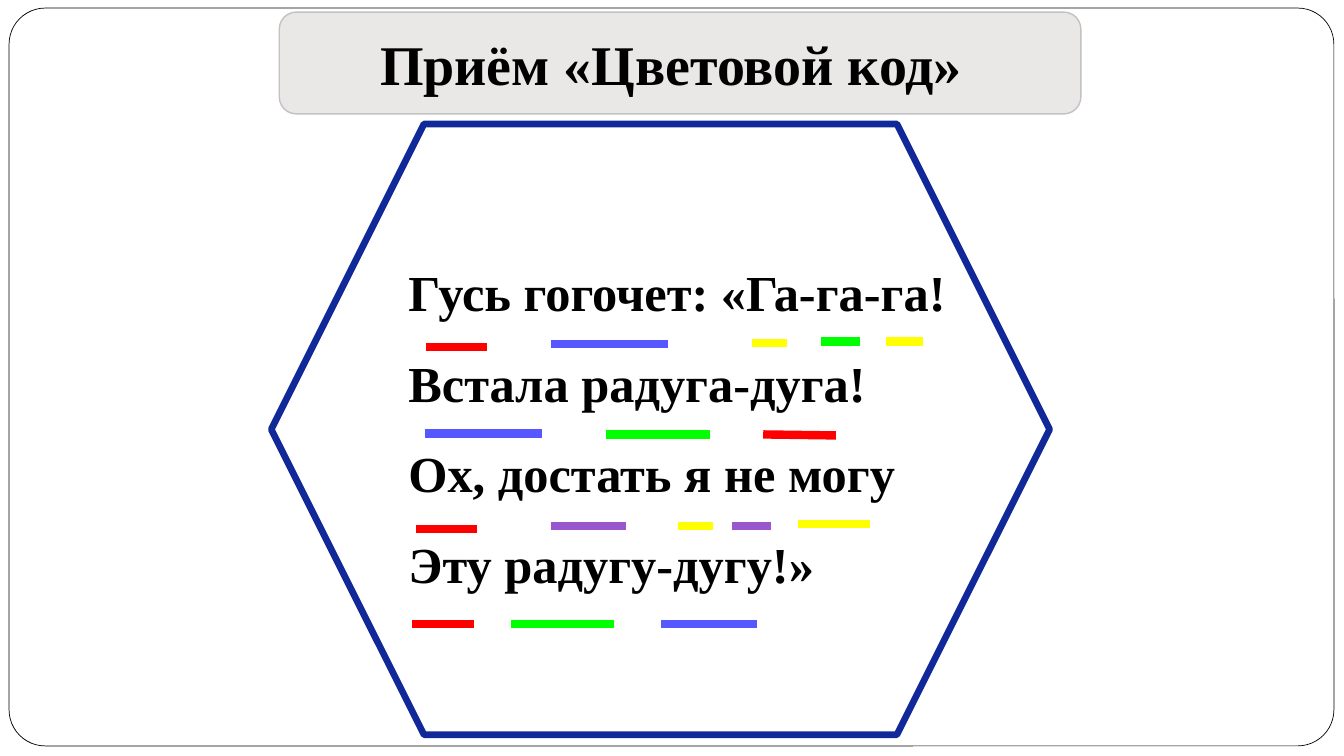
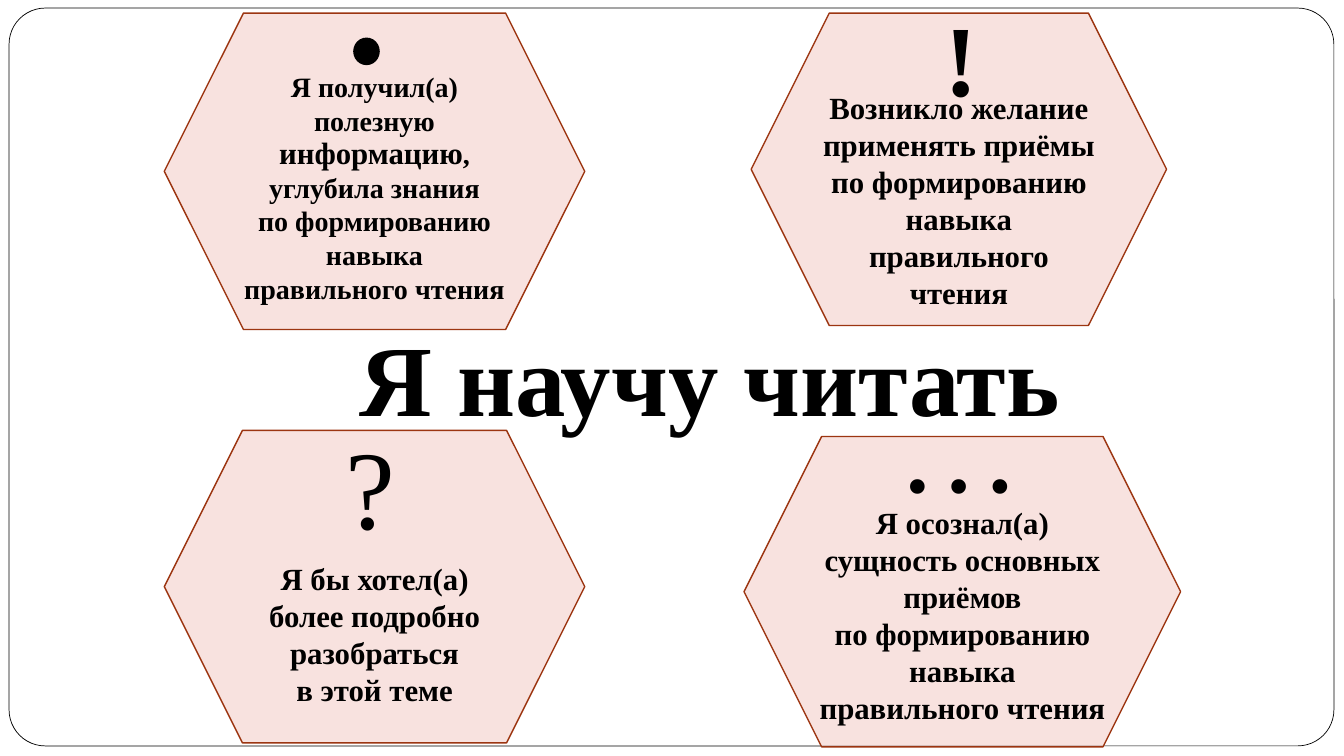
from lxml.etree import SubElement
from pptx import Presentation
from pptx.dml.color import RGBColor
from pptx.enum.shapes import MSO_CONNECTOR, MSO_SHAPE
from pptx.enum.text import MSO_ANCHOR, MSO_AUTO_SIZE, PP_ALIGN
from pptx.oxml.ns import qn
from pptx.util import Inches, Pt

FONT = "Times New Roman"
BLACK, WHITE = "000000", "FFFFFF"
RED, BLUE, GREEN, YELLOW, PURPLE = "FF0000", "5757FF", "00FF00", "FFFF00", "9A57CD"
LEADING = 1.2

FRAME_BOX = (0.09, 0.08, 13.14, 7.32)
BANNER_BOX = (2.77, 0.12, 7.95, 1.01)
VERSE_BOX = (3.95, 1.62, 9.37, 4.64)

VERSE = [
    "Гусь гогочет: «Га-га-га!",
    "Встала радуга-дуга!",
    "Ох, достать я не могу",
    "Эту радугу-дугу!»",
]
UNDERLINES = [
    (RED, 4.23, 4.83, 3.44, 3.44),
    (BLUE, 5.47, 6.63, 3.41, 3.41),
    (YELLOW, 7.46, 7.81, 3.4, 3.4),
    (GREEN, 8.14, 8.53, 3.39, 3.39),
    (YELLOW, 8.79, 9.15, 3.39, 3.39),
    (BLUE, 4.22, 5.38, 4.3, 4.3),
    (GREEN, 6.01, 7.04, 4.31, 4.31),
    (RED, 7.57, 8.29, 4.31, 4.32),
    (RED, 4.13, 4.73, 5.25, 5.25),
    (PURPLE, 5.47, 6.21, 5.22, 5.22),
    (YELLOW, 6.72, 7.07, 5.22, 5.22),
    (PURPLE, 7.26, 7.65, 5.22, 5.22),
    (YELLOW, 7.91, 8.63, 5.2, 5.2),
    (RED, 4.09, 4.7, 6.19, 6.19),
    (GREEN, 5.07, 6.09, 6.19, 6.19),
    (BLUE, 6.56, 7.51, 6.19, 6.19),
]

REFLECTIONS = [
    {"box": (1.63, 0.13, 4.17, 3.14), "text_top": 0.69, "size": 20, "paragraphs": [
        ["Я получил(а) полезную"],
        [("информацию", 22), ", углубила знания"],
        ["по формированию навыка"],
        ["правильного чтения"],
    ]},
    {"box": (7.45, 0.13, 4.12, 3.1), "text_top": 0.88, "size": 22, "paragraphs": [
        ["Возникло желание"],
        ["применять приёмы по формированию навыка правильного чтения"],
    ]},
    {"box": (1.63, 4.27, 4.17, 3.1), "text_top": 5.55, "size": 22, "paragraphs": [
        ["Я бы хотел(а)"],
        ["более подробно разобраться"],
        ["в этой теме"],
    ]},
    {"box": (7.38, 4.33, 4.33, 3.08), "text_top": 5.0, "size": 22, "paragraphs": [
        ["Я осознал(а) сущность основных приёмов"],
        ["по формированию навыка правильного чтения"],
    ]},
]
MARKS = [
    ("!", (9.27, -0.09, 0.54, 1.31), 72, True),
    ("?", (3.33, 4.09, 0.63, 1.45), 80, False),
    ("…", (8.8, 3.61, 1.44, 1.58), 88, False),
]
PERIOD_BOX = (3.51, 0.38, 0.25, 0.26)


def color(value):
    return RGBColor.from_string(value)


def inches(box):
    return [Inches(value) for value in box]


def place(shape, box):
    shape.left, shape.top, shape.width, shape.height = inches(box)


def style(paragraph, size, bold=True, align=PP_ALIGN.LEFT, leading=LEADING):
    paragraph.alignment = align
    paragraph.line_spacing = Pt(size * leading)
    paragraph.space_before = Pt(0)
    font = paragraph.font
    font.name, font.size, font.bold = FONT, Pt(size), bold
    font.color.rgb = color(BLACK)


def add_figure(slide, preset, box, fill, line, width, opacity=None):
    shape = slide.shapes.add_shape(preset, *inches(box))
    shape.shadow.inherit = False
    if fill:
        shape.fill.solid()
        shape.fill.fore_color.rgb = color(fill)
    else:
        shape.fill.background()
    if opacity:
        rgb = shape.fill._xPr.find(qn("a:solidFill"))[0]
        SubElement(rgb, qn("a:alpha"), val=str(opacity * 1000))
    shape.line.color.rgb = color(line)
    shape.line.width = Pt(width)
    return shape


def add_frame(presentation, slide):
    frame = add_figure(slide, MSO_SHAPE.ROUNDED_RECTANGLE, FRAME_BOX, WHITE, BLACK, 0.5)
    frame.adjustments[0] = 0.049
    presentation.slide_master.shapes._spTree.insert(2, frame._element)


def set_title(slide, text, box, size, align):
    title = slide.shapes.title
    place(title, box)
    title.text_frame.text = text
    title.text_frame.auto_size = MSO_AUTO_SIZE.NONE
    title.text_frame.vertical_anchor = MSO_ANCHOR.MIDDLE
    style(title.text_frame.paragraphs[0], size, align=align)


def add_verse(slide):
    body = slide.placeholders[1]
    place(body, VERSE_BOX)
    frame = body.text_frame
    frame.text = "\n".join(VERSE)
    frame.auto_size = MSO_AUTO_SIZE.NONE
    frame.margin_top = Inches(0.67)
    for paragraph in frame.paragraphs:
        style(paragraph, 36, leading=1.5 * LEADING)
        properties = paragraph._p.get_or_add_pPr()
        properties.set("marL", "0")
        properties.set("indent", "0")
        bullet = properties.makeelement(qn("a:buNone"))
        properties.find(qn("a:defRPr")).addprevious(bullet)


def add_underline(slide, shade, start, end, start_y, end_y):
    line = slide.shapes.add_connector(
        MSO_CONNECTOR.STRAIGHT, *inches((start, start_y, end, end_y)))
    line.line.color.rgb = color(shade)
    line.line.width = Pt(6)
    SubElement(line._element.spPr, qn("a:effectLst"))


def add_reflection(slide, box, text_top, size, paragraphs):
    shape = add_figure(slide, MSO_SHAPE.HEXAGON, box, "F4CEC9", "9C3511", 1, 58)
    left, top, width, height = box
    inner_top = top + height * (1 + height / width) / 12
    frame = shape.text_frame
    frame.word_wrap = True
    frame.vertical_anchor = MSO_ANCHOR.TOP
    frame.margin_top = Inches(round(text_top - inner_top, 2))
    for index, pieces in enumerate(paragraphs):
        paragraph = frame.add_paragraph() if index else frame.paragraphs[0]
        style(paragraph, size, align=PP_ALIGN.CENTER)
        for piece in pieces:
            text, run_size = (piece, None) if isinstance(piece, str) else piece
            run = paragraph.add_run()
            run.text = text
            if run_size:
                run.font.size = Pt(run_size)


def add_mark(slide, text, box, size, bold):
    frame = slide.shapes.add_textbox(*inches(box)).text_frame
    frame.word_wrap = False
    frame.text = text
    style(frame.paragraphs[0], size, bold)


def build_color_code(presentation):
    slide = presentation.slides.add_slide(presentation.slide_layouts[1])
    add_frame(presentation, slide)
    banner = add_figure(slide, MSO_SHAPE.ROUNDED_RECTANGLE, BANNER_BOX, "D3CECE", "C3C1C1", 1, 47)
    slide.shapes._spTree.insert(2, banner._element)
    set_title(slide, "Приём «Цветовой код»", (3.67, 0.12, 6.93, 1.01), 40, PP_ALIGN.LEFT)
    add_verse(slide)
    add_figure(slide, MSO_SHAPE.HEXAGON, (2.69, 1.23, 7.72, 6.06), None, "112899", 4.75)
    for underline in UNDERLINES:
        add_underline(slide, *underline)


def build_reflection(presentation):
    slide = presentation.slides.add_slide(presentation.slide_layouts[5])
    set_title(slide, "Я научу читать", (3.43, 3.08, 7.22, 1.31), 72, PP_ALIGN.CENTER)
    for reflection in REFLECTIONS:
        add_reflection(slide, **reflection)
    add_figure(slide, MSO_SHAPE.FLOWCHART_CONNECTOR, PERIOD_BOX, BLACK, BLACK, 1)
    for mark in MARKS:
        add_mark(slide, *mark)


def main():
    presentation = Presentation()
    presentation.slide_width = Inches(13.33)
    presentation.slide_height = Inches(7.5)
    build_color_code(presentation)
    build_reflection(presentation)
    presentation.save("out.pptx")


if __name__ == "__main__":
    main()
